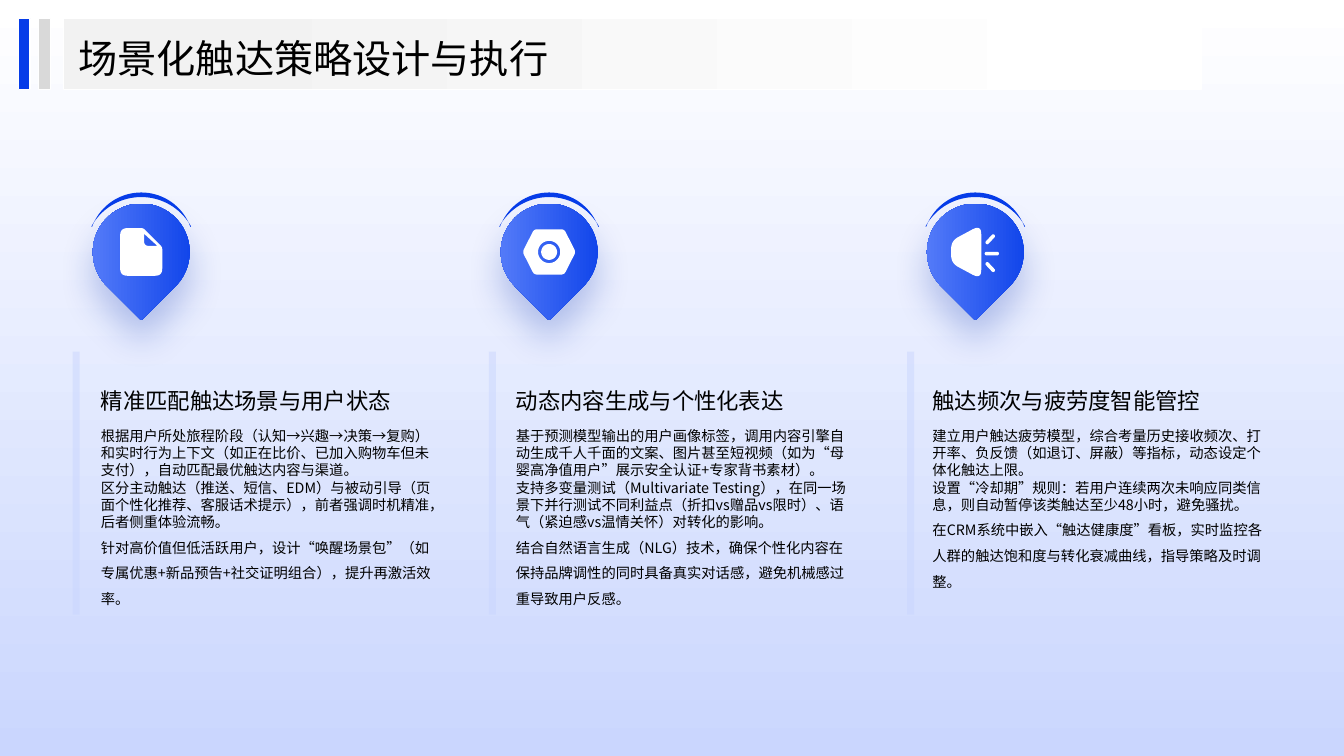
import math
from dataclasses import dataclass

from lxml import etree
from pptx import Presentation
from pptx.dml.color import RGBColor
from pptx.enum import shapes as kinds, text as txt
from pptx.oxml import ns
from pptx.util import Cm, Pt


@dataclass(frozen=True)
class Theme:
    font: str = "Noto Sans CJK SC"
    ink: str = "000000"
    white: str = "FFFFFF"
    blue: str = "063CE8"
    light_blue: str = "6085FB"
    pale: str = "CAD6FE"
    shadow: str = "052DAE"
    grey: str = "D9D9D9"
    light_grey: str = "F2F2F2"
    title_pt: float = 28
    heading_pt: float = 16
    body_pt: float = 10.2


THEME = Theme()
PIN_Y = 6.35  # centre of the pins, in cm


# Outlines: lists of (x, y) in cm around a pin's centre
def arc(x, y, radius, start, end, steps=36):
    angles = [math.radians(start + (end - start) * i / steps) for i in range(steps + 1)]
    return [(x + radius * math.cos(a), y + radius * math.sin(a)) for a in angles]


def rounded(*corners, steps=8):
    """Polygon whose (x, y, r) corners are cut r before and after each point."""
    outline = []
    for i, (x, y, r) in enumerate(corners):
        ends = []
        for nx, ny, _ in (corners[i - 1], corners[(i + 1) % len(corners)]):
            share = r / math.hypot(nx - x, ny - y)
            ends.append((x + (nx - x) * share, y + (ny - y) * share))
        (ax, ay), (bx, by) = ends
        for t in [s / steps for s in range(steps + 1)] if r else [0]:
            a, c, b = (1 - t) ** 2, 2 * t * (1 - t), t * t
            outline.append((a * ax + c * x + b * bx, a * ay + c * y + b * by))
    return outline


def ray(x1, y1, x2, y2, radius=0.045):
    turn = math.degrees(math.atan2(y2 - y1, x2 - x1))
    return (arc(x2, y2, radius, turn - 90, turn + 90, 8)
            + arc(x1, y1, radius, turn + 90, turn + 270, 8))


CRESCENT = [arc(0, -0.18, 1.32, -160, -20) + arc(0, 0.05, 1.435, -29, -151)]
DOCUMENT = [
    rounded((-0.53, -0.6, 0.18), (0.05, -0.6, 0.05), (0.53, -0.12, 0.05),
            (0.53, 0.6, 0.18), (-0.53, 0.6, 0.18)),
    rounded((0.07, -0.46, 0), (0.41, -0.15, 0), (0.07, -0.15, 0.13)),
]
NUT = [
    rounded((-0.38, -0.57, 0.08), (0.38, -0.57, 0.08), (0.67, 0, 0.08),
            (0.38, 0.57, 0.08), (-0.38, 0.57, 0.08), (-0.67, 0, 0.08)),
    arc(0, 0, 0.28, 0, 360),
    arc(0, 0, 0.2, 0, 360),
]
SPEAKER = [
    rounded((-0.61, -0.28, 0.2), (0.15, -0.69, 0.25),
            (0.15, 0.69, 0.25), (-0.61, 0.28, 0.2)),
    ray(0.3, -0.24, 0.45, -0.4),
    ray(0.28, 0.04, 0.55, 0.04),
    ray(0.3, 0.3, 0.45, 0.46),
]

# Columns: pin centre, bar left, text left, icon, heading, paragraphs
COLUMNS = [
    (3.56, 1.83, 2.54, DOCUMENT, "精准匹配触达场景与用户状态", [
        "根据用户所处旅程阶段（认知→兴趣→决策→复购）和实时行为上下文（如正在比价、已加入购物车但未支付），自动匹配最优触达内容与渠道。",
        "区分主动触达（推送、短信、EDM）与被动引导（页面个性化推荐、客服话术提示），前者强调时机精准，后者侧重体验流畅。",
        "针对高价值但低活跃用户，设计“唤醒场景包”（如专属优惠+新品预告+社交证明组合），提升再激活效率。"]),
    (13.84, 12.32, 13.0, NUT, "动态内容生成与个性化表达", [
        "基于预测模型输出的用户画像标签，调用内容引擎自动生成千人千面的文案、图片甚至短视频（如为“母婴高净值用户”展示安全认证+专家背书素材）。",
        "支持多变量测试（Multivariate Testing），在同一场景下并行测试不同利益点（折扣vs赠品vs限时）、语气（紧迫感vs温情关怀）对转化的影响。",
        "结合自然语言生成（NLG）技术，确保个性化内容在保持品牌调性的同时具备真实对话感，避免机械感过重导致用户反感。"]),
    (24.58, 22.86, 23.5, SPEAKER, "触达频次与疲劳度智能管控", [
        "建立用户触达疲劳模型，综合考量历史接收频次、打开率、负反馈（如退订、屏蔽）等指标，动态设定个体化触达上限。",
        "设置“冷却期”规则：若用户连续两次未响应同类信息，则自动暂停该类触达至少48小时，避免骚扰。",
        "在CRM系统中嵌入“触达健康度”看板，实时监控各人群的触达饱和度与转化衰减曲线，指导策略及时调整。"]),
]


# Fills and shapes
def paint(shape, color, line=None, alpha=None):
    shape.shadow.inherit = False
    shape.fill.solid()
    shape.fill.fore_color.rgb = RGBColor.from_string(color)
    if alpha:
        clr = shape.fill._xPr.find(".//" + ns.qn("a:srgbClr"))
        etree.SubElement(clr, ns.qn("a:alpha"), val=str(alpha * 1000))
    if line:
        shape.line.color.rgb = RGBColor.from_string(line)
        shape.line.width = Pt(1)
    else:
        shape.line.fill.background()


def blend(shape, first, last, angle):
    """Two (position, colour) stops; angle runs clockwise."""
    shape.fill.gradient()
    shape.fill.gradient_angle = (360 - angle) % 360
    for stop, (position, color) in zip(shape.fill.gradient_stops, (first, last)):
        stop.position = position
        stop.color.rgb = RGBColor.from_string(color)


def block(slide, box, color, line=None, alpha=None, kind=kinds.MSO_SHAPE.RECTANGLE):
    shape = slide.shapes.add_shape(kind, *map(Cm, box))
    paint(shape, color, line, alpha)
    return shape


def outline(slide, center_x, contours, color):
    placed = [[(Cm(center_x + x), Cm(PIN_Y + y)) for x, y in c] for c in contours]
    builder = slide.shapes.build_freeform(*placed[0][0], scale=1.0)
    builder.add_line_segments(placed[0][1:], close=True)
    for contour in placed[1:]:
        builder.move_to(*contour[0])
        builder.add_line_segments(contour[1:], close=True)
    paint(builder.convert_to_shape(), color)


def drop_shadow(shape):
    effects = shape._element.spPr.find(ns.qn("a:effectLst"))
    outer = etree.SubElement(effects, ns.qn("a:outerShdw"), blurRad=str(Pt(26)),
                             dist=str(Pt(15)), dir="5400000", algn="t")
    clr = etree.SubElement(outer, ns.qn("a:srgbClr"), val=THEME.shadow)
    etree.SubElement(clr, ns.qn("a:alpha"), val="25000")


# Text
def write(frame, paragraphs, size, anchor):
    """Each paragraph is (text, line spacing)."""
    frame.word_wrap = True
    frame.auto_size = txt.MSO_AUTO_SIZE.NONE
    frame.vertical_anchor = anchor
    frame.margin_left = frame.margin_right = frame.margin_top = frame.margin_bottom = 0
    for i, (words, spacing) in enumerate(paragraphs):
        para = frame.add_paragraph() if i else frame.paragraphs[0]
        para.alignment = txt.PP_ALIGN.LEFT
        para.line_spacing = spacing
        para.space_before = Pt(0)
        run = para.add_run()
        run.text = words
        run.font.size = Pt(size)
        run.font.name = THEME.font
        run.font.color.rgb = RGBColor.from_string(THEME.ink)
        etree.SubElement(run.font._element, ns.qn("a:ea"), typeface=THEME.font)


def text_box(slide, box, paragraphs, size, anchor):
    frame = slide.shapes.add_textbox(*map(Cm, box)).text_frame
    write(frame, paragraphs, size, anchor)


# Parts of the slide
def header(slide, words):
    band = block(slide, (1.6, 0.46, 28.68, 1.8), THEME.white, THEME.white)
    blend(band, (0.1, THEME.light_grey), (0.93, THEME.white), 0)
    title = slide.shapes.title
    title.left, title.top, title.width, title.height = map(Cm, (1.98, 0.74, 21.08, 1.3))
    write(title.text_frame, [(words, 1.1)], THEME.title_pt, txt.MSO_ANCHOR.MIDDLE)
    title.element.getparent().append(title.element)  # in front of the band
    for left, color in ((0.46, THEME.blue), (0.97, THEME.grey)):
        block(slide, (left, 0.46, 0.3, 1.8), color, THEME.white)


def pin(slide, center_x, icon):
    size = 2.44
    drop = block(slide, (center_x - size / 2, PIN_Y - size / 2, size, size),
                 THEME.blue, kind=kinds.MSO_SHAPE.TEAR)
    drop.rotation = 135
    blend(drop, (0.01, THEME.blue), (1, THEME.light_blue), 45)
    drop_shadow(drop)
    outline(slide, center_x, CRESCENT, THEME.blue)
    outline(slide, center_x, icon, THEME.white)


def column(slide, center_x, bar_left, text_left, icon, heading, points):
    pin(slide, center_x, icon)
    block(slide, (bar_left, 8.86, 0.18, 6.63), THEME.pale, alpha=50)
    text_box(slide, (text_left, 8.36, 8.51, 2.08), [(heading, 1.3)],
             THEME.heading_pt, txt.MSO_ANCHOR.BOTTOM)
    text_box(slide, (text_left, 10.77, 8.51, 4.72), list(zip(points, (1.0, 1.0, 1.5))),
             THEME.body_pt, txt.MSO_ANCHOR.TOP)


def main():
    deck = Presentation()
    deck.slide_width, deck.slide_height = Cm(33.87), Cm(19.05)
    slide = deck.slides.add_slide(deck.slide_layouts[5])
    backdrop = block(slide, (0, 0, 33.87, 19.05), THEME.white)
    blend(backdrop, (0, THEME.white), (1, THEME.pale), 90)
    for part in COLUMNS:
        column(slide, *part)
    header(slide, "场景化触达策略设计与执行")
    deck.save("out.pptx")


if __name__ == "__main__":
    main()
